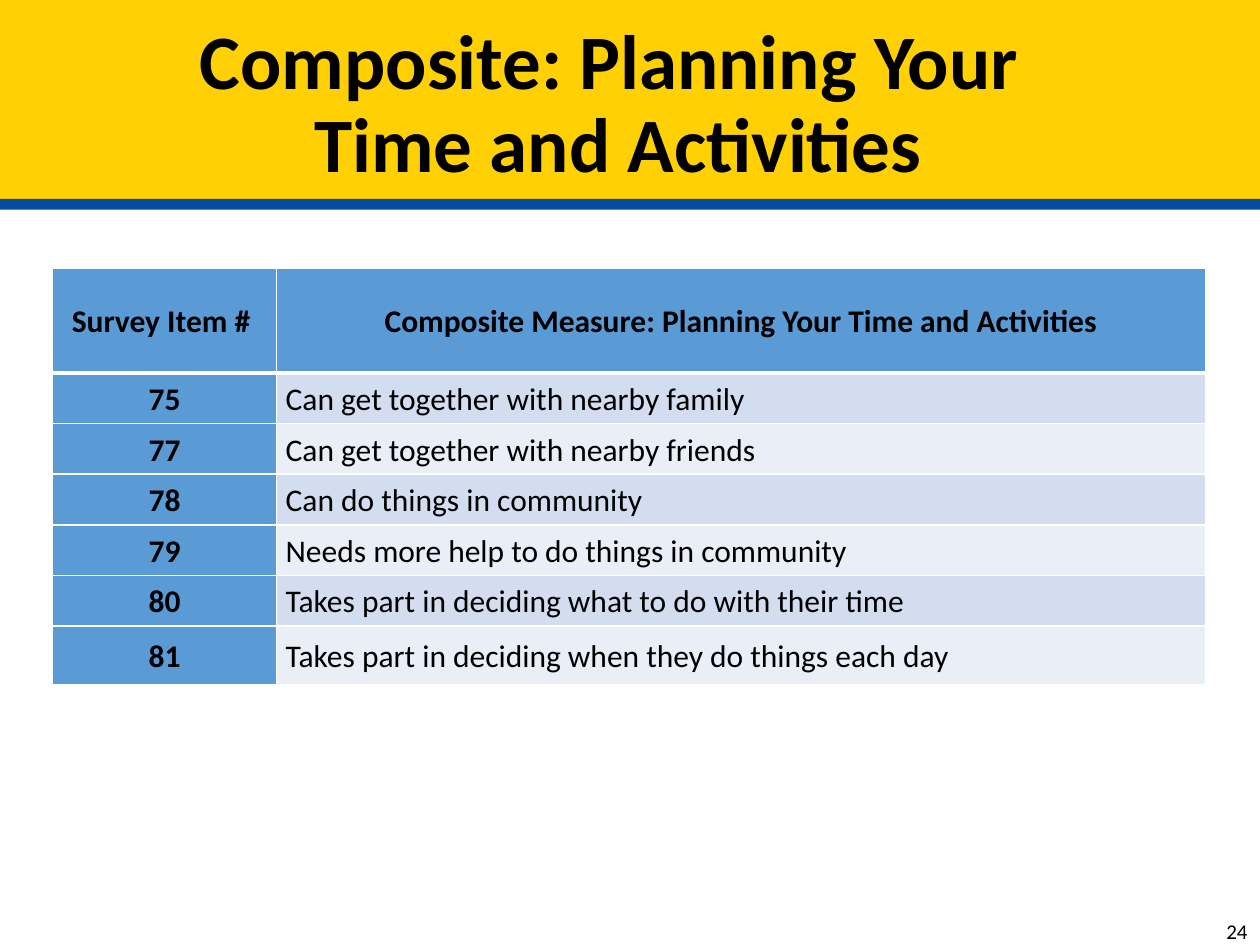
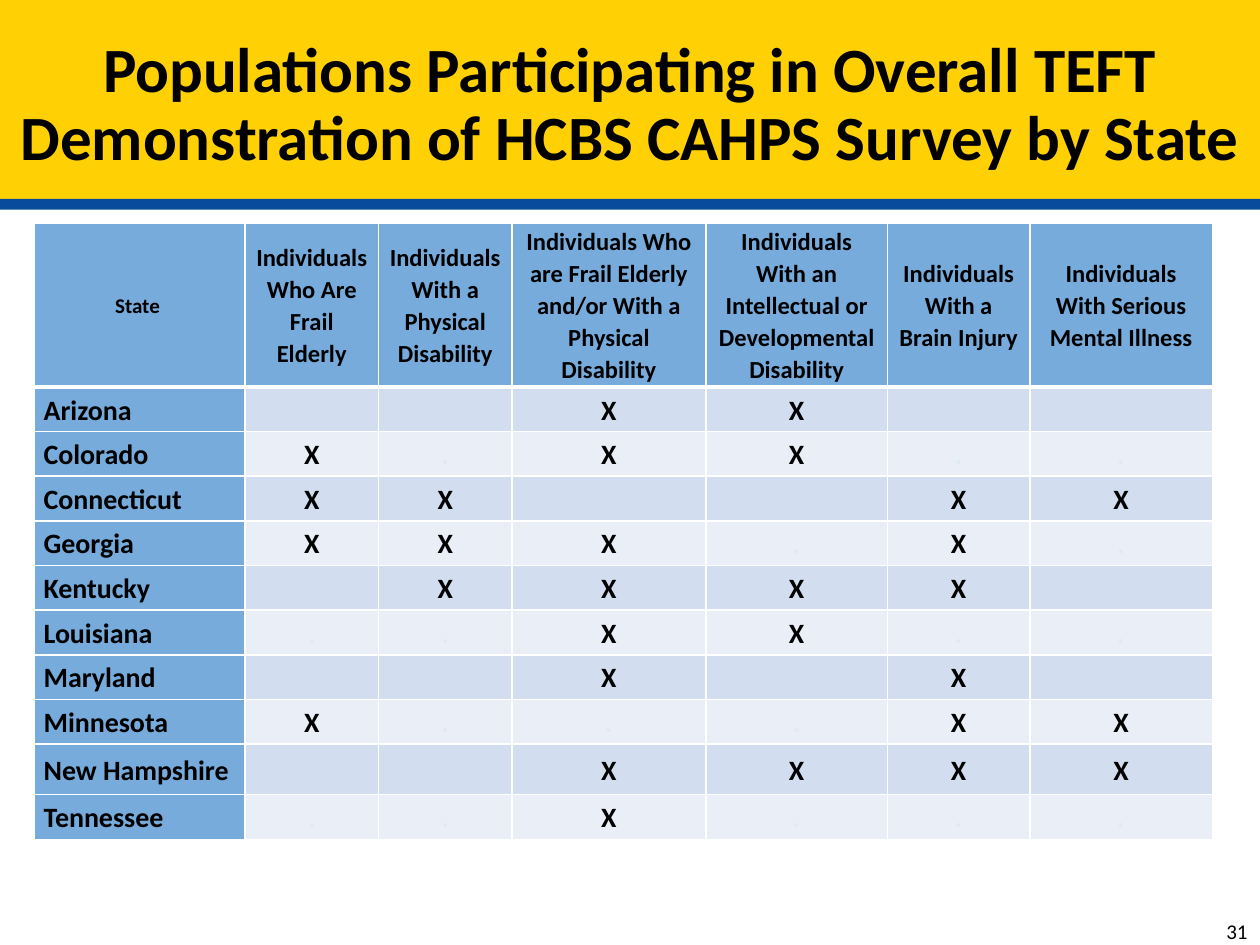
import dataclasses

import lxml.etree
import pptx
import pptx.dml.color
import pptx.enum.shapes
import pptx.enum.text
import pptx.oxml.ns
import pptx.util

Cm = pptx.util.Cm
Pt = pptx.util.Pt
RGBColor = pptx.dml.color.RGBColor
Align = pptx.enum.text.PP_ALIGN
MIDDLE = pptx.enum.text.MSO_ANCHOR.MIDDLE

FONT = "Calibri"
BLACK = RGBColor(0x00, 0x00, 0x00)
WHITE = RGBColor(0xFF, 0xFF, 0xFF)
YELLOW = RGBColor(0xFF, 0xD0, 0x04)
NAVY = RGBColor(0x08, 0x4A, 0x9C)
BLUE = RGBColor(0x5B, 0x9B, 0xD5)
SOFT_BLUE = RGBColor(0x76, 0xAB, 0xDC)
DARK_ROW = RGBColor(0xD2, 0xDE, 0xEF)
LIGHT_ROW = RGBColor(0xEA, 0xEF, 0xF7)
FAINT_DOT = RGBColor(0xDE, 0xEB, 0xF7)

SLIDE_WIDTH = 25.4
SLIDE_HEIGHT = 19.05


@dataclasses.dataclass(frozen=True)
class Band:
    top: float
    height: float
    color: RGBColor


@dataclasses.dataclass(frozen=True)
class Title:
    text: str
    left: float
    width: float
    size: int


@dataclasses.dataclass(frozen=True)
class Grid:
    left: float
    top: float
    widths: list[float]
    heights: list[float]
    rows: list[list[str]]
    heading_color: RGBColor
    heading_size: int
    corner_size: int
    body_size: int
    body_bold: bool
    first_align: Align
    body_align: Align


BANDS = [Band(0, 4.01, YELLOW), Band(4.01, 0.22, NAVY)]

COMPOSITE_ITEMS = [
    ["Survey Item # ", "Composite Measure: Planning Your Time and Activities"],
    ["75", "Can get together with nearby family"],
    ["77", "Can get together with nearby friends"],
    ["78", "Can do things in community"],
    ["79", "Needs more help to do things in community"],
    ["80", "Takes part in deciding what to do with their time"],
    ["81", "Takes part in deciding when they do things each day"],
]

POPULATIONS = [
    "State ",
    "Individuals Who Are Frail Elderly",
    "Individuals With a Physical Disability",
    "Individuals Who are Frail Elderly and/or With a Physical Disability",
    "Individuals With an Intellectual or Developmental Disability",
    "Individuals With a Brain Injury",
    "Individuals With Serious Mental Illness",
]

STATE_MARKS = {
    "Arizona": "  XX  ",
    "Colorado": "X.XX..",
    "Connecticut": "XX  XX",
    "Georgia": "XXX.X.",
    "Kentucky": " XXXX ",
    "Louisiana": "..XX..",
    "Maryland": "  X X ",
    "Minnesota": "X...XX",
    "New Hampshire": "  XXXX",
    "Tennessee": "..X...",
}

COMPOSITE_GRID = Grid(
    left=1.06, top=5.41,
    widths=[4.52, 18.72],
    heights=[2.11] + [1.02] * 5 + [1.19],
    rows=COMPOSITE_ITEMS,
    heading_color=BLUE,
    heading_size=18, corner_size=18, body_size=18, body_bold=False,
    first_align=Align.CENTER, body_align=Align.LEFT,
)

STATE_GRID = Grid(
    left=0.7, top=4.5,
    widths=[4.24, 2.69, 2.69, 3.91, 3.66, 2.87, 3.68],
    heights=[3.3] + [0.9] * 8 + [1.02, 0.9],
    rows=[POPULATIONS] + [
        [state] + [mark.strip() for mark in marks]
        for state, marks in STATE_MARKS.items()
    ],
    heading_color=SOFT_BLUE,
    heading_size=14, corner_size=12, body_size=16, body_bold=True,
    first_align=Align.LEFT, body_align=Align.CENTER,
)


def write_text(text_frame, text: str, *, size: int, bold: bool = False,
               color: RGBColor = BLACK, align: Align = Align.LEFT,
               line_spacing: float = 1.0) -> None:
    text_frame.text = text
    paragraph = text_frame.paragraphs[0]
    paragraph.alignment = align
    paragraph.line_spacing = line_spacing
    paragraph.space_before = Pt(0)
    font = paragraph.font
    font.name = FONT
    font.size = Pt(size)
    font.bold = bold
    font.color.rgb = color


def add_bands(slide) -> None:
    for band in BANDS:
        shape = slide.shapes.add_shape(
            pptx.enum.shapes.MSO_SHAPE.RECTANGLE,
            Cm(0), Cm(band.top), Cm(SLIDE_WIDTH), Cm(band.height))
        shape.shadow.inherit = False
        shape.fill.solid()
        shape.fill.fore_color.rgb = band.color
        shape.line.fill.background()


def place_title(slide, title: Title) -> None:
    shape = slide.shapes.title
    shape.element.getparent().append(shape.element)
    shape.left, shape.top = Cm(title.left), Cm(0.3)
    shape.width, shape.height = Cm(title.width), Cm(3.68)
    text_frame = shape.text_frame
    text_frame.auto_size = pptx.enum.text.MSO_AUTO_SIZE.NONE
    text_frame.vertical_anchor = MIDDLE
    write_text(text_frame, title.text, size=title.size, bold=True,
               align=Align.CENTER, line_spacing=0.9)


def add_page_number(slide, number: int) -> None:
    box = slide.shapes.add_textbox(Cm(19.69), Cm(18.26), Cm(5.71), Cm(1.02))
    box.text_frame.word_wrap = True
    box.text_frame.vertical_anchor = MIDDLE
    write_text(box.text_frame, str(number), size=12, align=Align.RIGHT)


def set_borders(cell, row: int) -> None:
    qualify = pptx.oxml.ns.qn
    properties = cell._tc.get_or_add_tcPr()
    points = {"lnL": 1, "lnR": 1,
              "lnT": 3 if row == 1 else 1,
              "lnB": 3 if row == 0 else 1}
    for side, width in points.items():
        line = lxml.etree.SubElement(
            properties, qualify(f"a:{side}"), w=str(Pt(width)))
        fill = lxml.etree.SubElement(line, qualify("a:solidFill"))
        lxml.etree.SubElement(fill, qualify("a:srgbClr"), val=str(WHITE))


def format_cell(cell, grid: Grid, row: int, column: int) -> None:
    text = grid.rows[row][column]
    is_heading = row == 0 or column == 0
    set_borders(cell, row)
    cell.fill.solid()
    if is_heading:
        cell.fill.fore_color.rgb = grid.heading_color
    else:
        cell.fill.fore_color.rgb = DARK_ROW if row % 2 else LIGHT_ROW
    cell.vertical_anchor = MIDDLE
    cell.margin_left = cell.margin_right = Cm(0.18)
    cell.margin_top = cell.margin_bottom = Cm(0)

    if row == 0:
        size = grid.heading_size if column else grid.corner_size
        align = Align.CENTER
    else:
        size = grid.body_size
        align = grid.body_align if column else grid.first_align
    write_text(cell.text_frame, text, size=size,
               bold=is_heading or grid.body_bold,
               color=FAINT_DOT if text == "." else BLACK,
               align=align, line_spacing=1.07)


def add_grid(slide, grid: Grid) -> None:
    table = slide.shapes.add_table(
        len(grid.heights), len(grid.widths), Cm(grid.left), Cm(grid.top),
        Cm(sum(grid.widths)), Cm(sum(grid.heights))).table
    for column, width in zip(table.columns, grid.widths):
        column.width = Cm(width)
    for row, height in zip(table.rows, grid.heights):
        row.height = Cm(height)
    for row in range(len(grid.heights)):
        for column in range(len(grid.widths)):
            format_cell(table.cell(row, column), grid, row, column)


def add_table_slide(presentation, title: Title, grid: Grid,
                    number: int) -> None:
    slide = presentation.slides.add_slide(presentation.slide_layouts[5])
    add_bands(slide)
    add_grid(slide, grid)
    add_page_number(slide, number)
    place_title(slide, title)


def main() -> None:
    presentation = pptx.Presentation()
    presentation.slide_width = Cm(SLIDE_WIDTH)
    presentation.slide_height = Cm(SLIDE_HEIGHT)
    add_table_slide(
        presentation,
        Title("Composite: Planning Your \vTime and Activities",
              left=1.52, width=21.89, size=44),
        COMPOSITE_GRID, 24)
    add_table_slide(
        presentation,
        Title("Populations Participating in Overall TEFT "
              "Demonstration of HCBS CAHPS Survey by State",
              left=0, width=SLIDE_WIDTH, size=36),
        STATE_GRID, 31)
    presentation.save("out.pptx")


if __name__ == "__main__":
    main()
